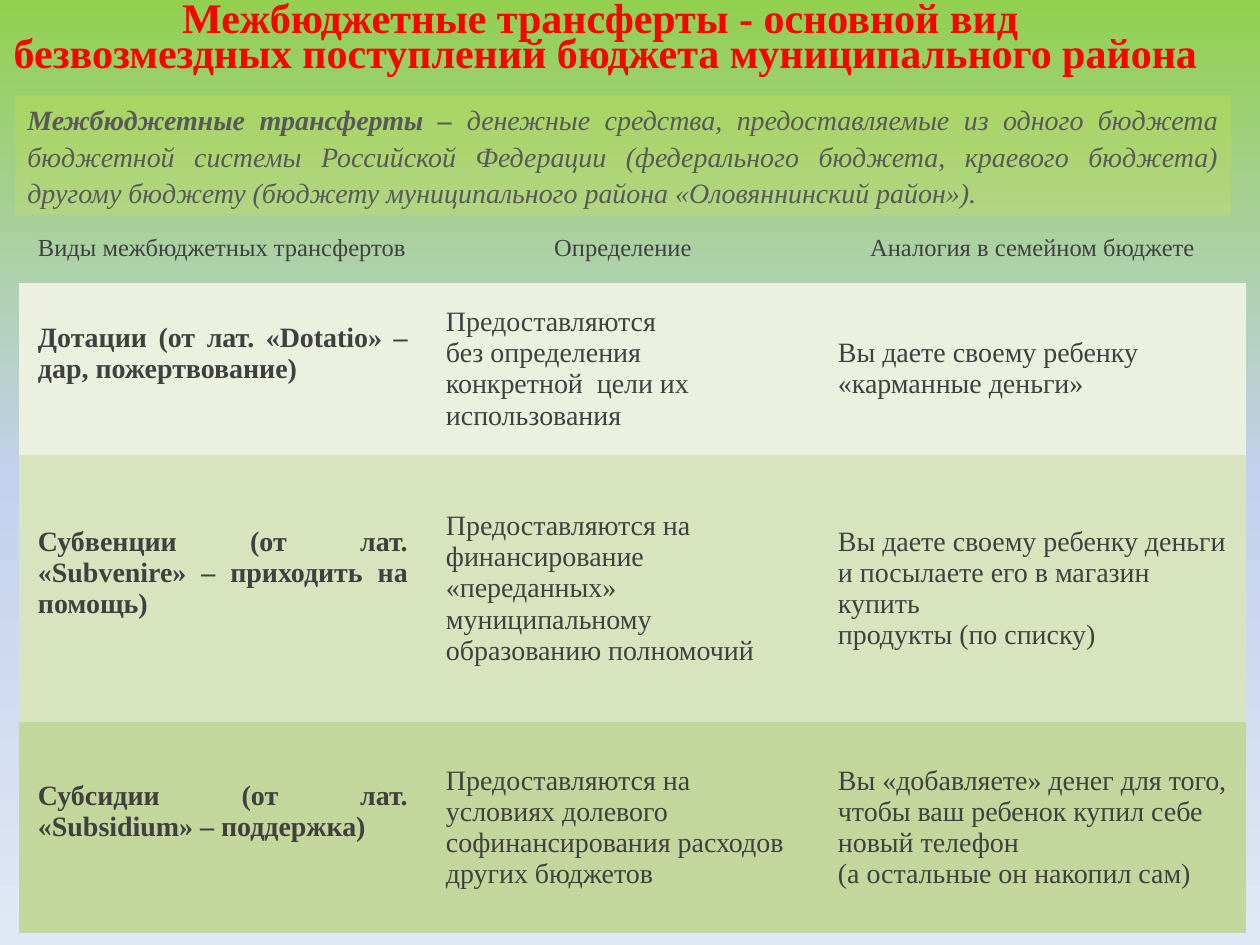
from copy import deepcopy

from lxml.etree import SubElement
from pptx import Presentation
from pptx.dml.color import RGBColor
from pptx.enum.shapes import MSO_SHAPE
from pptx.enum.text import MSO_ANCHOR, PP_ALIGN
from pptx.oxml.ns import qn
from pptx.util import Pt

EMU_PER_PX = 914400 / 126
FONT = "Times New Roman"
NO_STYLE = "{2D5ABB26-0587-4C30-8999-92F81FD0307C}"
COLORS = {
    "title": "FF0000", "text": "404040", "definition": "595959", "panel": "FFFF00",
    "grants": "EBF1DE", "subventions": "D7E4BD", "subsidies": "C3D69B",
    "top": "92D050", "middle": "C2D1ED", "bottom": "E1E8F5",
}
HEADERS = ["Виды межбюджетных трансфертов", "Определение", "Аналогия в семейном бюджете"]
TRANSFERS = {
    "grants": [
        "Дотации (от лат. «Dotatio» – дар, пожертвование)",
        "Предоставляются\nбез определения\nконкретной  цели их\nиспользования",
        "Вы даете своему ребенку\n«карманные деньги»",
    ],
    "subventions": [
        "Субвенции (от лат. «Subvenire» – приходить на помощь)",
        "Предоставляются на\nфинансирование\n«переданных» муниципальному образованию полномочий",
        "Вы даете своему ребенку деньги и посылаете его в магазин купить\nпродукты (по списку)",
    ],
    "subsidies": [
        "Субсидии (от лат. «Subsidium» – поддержка)",
        "Предоставляются на\nусловиях долевого софинансирования расходов других бюджетов",
        "Вы «добавляете» денег для того, чтобы ваш ребенок купил себе новый телефон\n"
        "(а остальные он накопил сам)",
    ],
}


def px(n):
    return round(n * EMU_PER_PX)


def rgb(name):
    return RGBColor.from_string(COLORS[name])


class SlideBuilder:
    def __init__(self, slide):
        self.s = slide

    def background(self, names):
        fill = self.s.background.fill
        fill.gradient()
        fill.gradient_angle = 270
        stops = self.s.background._cSld.find(".//" + qn("a:gsLst"))
        stops.append(deepcopy(stops[0]))
        for i, (stop, name) in enumerate(zip(fill.gradient_stops, names)):
            stop.color.rgb = rgb(name)
            stop.position = i / (len(names) - 1)

    def format(self, tf, size, color, align, bold=False, italic=False, spacing=None):
        for p in tf.paragraphs:
            p.alignment = align
            p.line_spacing = spacing
            for r in p.runs:
                r.font.name = FONT
                r.font.size = Pt(size)
                r.font.bold = bold
                r.font.italic = italic
                r.font.color.rgb = rgb(color)

    def title(self, text, x, y, w, h):
        sp = self.s.shapes.title
        sp.left, sp.top, sp.width, sp.height = map(px, (x, y, w, h))
        tf = sp.text_frame
        tf.text = text
        tf.word_wrap = True
        tf.vertical_anchor = MSO_ANCHOR.TOP
        self.format(tf, 24, "title", PP_ALIGN.CENTER, bold=True, spacing=Pt(20.1))

    def panel(self, term, definition, x, y, w, h):
        sp = self.s.shapes.add_shape(MSO_SHAPE.RECTANGLE, *map(px, (x, y, w, h)))
        sp.shadow.inherit = False
        sp.line.fill.background()
        sp.fill.solid()
        sp.fill.fore_color.rgb = rgb("panel")
        color = sp._element.spPr.find(qn("a:solidFill"))[0]
        SubElement(color, qn("a:alpha"), val="12000")
        tf = sp.text_frame
        tf.word_wrap = True
        tf.vertical_anchor = MSO_ANCHOR.MIDDLE
        p = tf.paragraphs[0]
        for text in (term, definition):
            p.add_run().text = text
        self.format(tf, 16, "definition", PP_ALIGN.JUSTIFY, italic=True, spacing=1.08)
        p.runs[0].font.bold = True

    def cell(self, cell, text, size, align, bold=False, fill=None, bottom=19):
        cell.margin_left = cell.margin_right = cell.margin_top = px(19)
        cell.margin_bottom = px(bottom)
        cell.vertical_anchor = MSO_ANCHOR.MIDDLE
        if fill:
            cell.fill.solid()
            cell.fill.fore_color.rgb = rgb(fill)
        else:
            cell.fill.background()
        cell.text_frame.text = text
        self.format(cell.text_frame, size, "text", align, bold)

    def table(self, headers, rows, x, y, widths, heights):
        frame = self.s.shapes.add_table(
            len(heights), len(widths), px(x), px(y), px(sum(widths)), px(sum(heights)))
        table = frame.table
        table.first_row = table.horz_banding = False
        table._tbl.tblPr.find(qn("a:tableStyleId")).text = NO_STYLE
        for column, w in zip(table.columns, widths):
            column.width = px(w)
        for row, h in zip(table.rows, heights):
            row.height = px(h)
        for c, text in enumerate(headers):
            self.cell(table.cell(0, c), text, 14, PP_ALIGN.CENTER if c else PP_ALIGN.LEFT)
        for r, (fill, texts) in enumerate(rows.items(), 1):
            self.cell(table.cell(r, 0), texts[0], 16, PP_ALIGN.JUSTIFY, True, fill, bottom=50)
            for c, text in enumerate(texts[1:], 1):
                self.cell(table.cell(r, c), text, 16, PP_ALIGN.LEFT, fill=fill)


def main():
    prs = Presentation()
    prs.slide_width, prs.slide_height = px(1260), px(945)
    b = SlideBuilder(prs.slides.add_slide(prs.slide_layouts[5]))
    b.background(["top", "middle", "bottom"])
    b.table(HEADERS, TRANSFERS, 19, 214, [408, 392, 427], [69, 172, 267, 211])
    b.title("Межбюджетные трансферты - основной вид \n"
            "безвозмездных поступлений бюджета муниципального района", 0, 0, 1211, 118)
    b.panel("Межбюджетные трансферты – ",
            "денежные средства, предоставляемые из одного бюджета бюджетной системы "
            "Российской Федерации (федерального бюджета, краевого бюджета) другому бюджету "
            "(бюджету муниципального района «Оловяннинский район»).", 15, 95, 1216, 119)
    prs.save("out.pptx")


if __name__ == "__main__":
    main()
